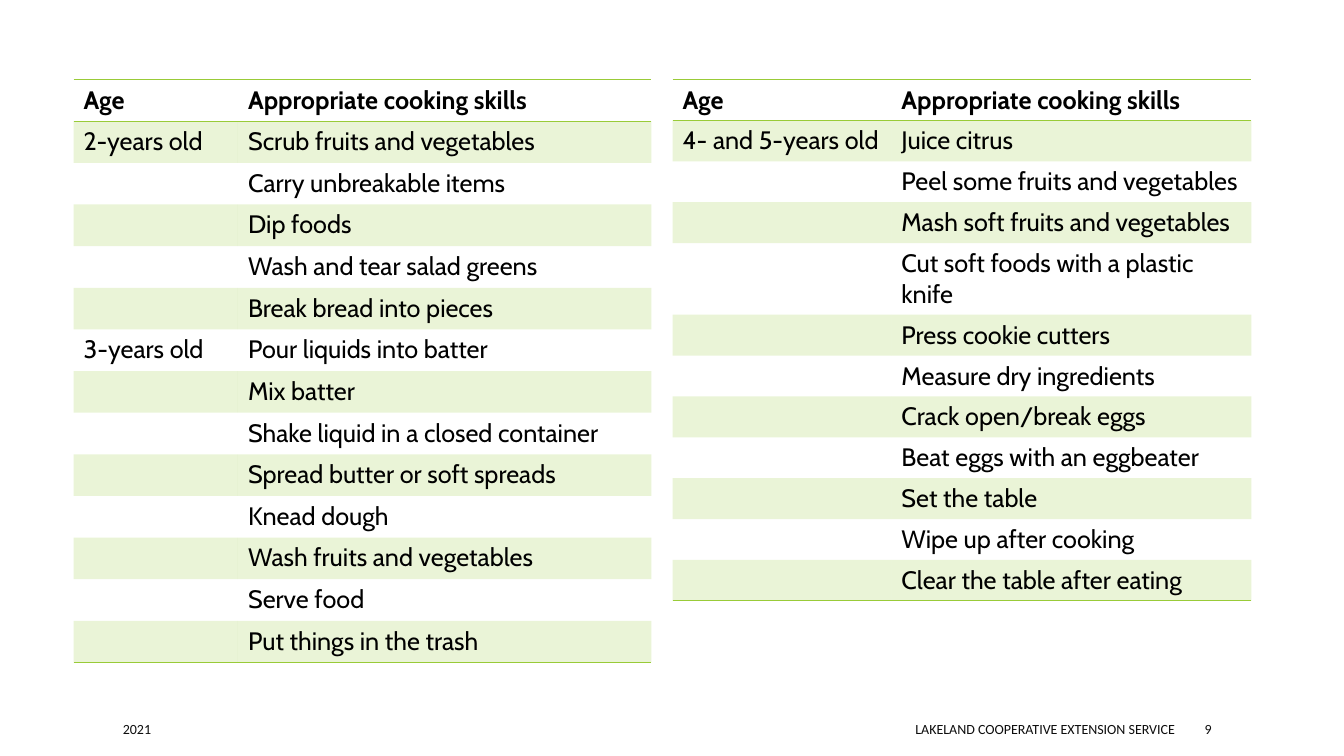
"""Build a slide with two tables of cooking skills by age."""
from dataclasses import dataclass

import lxml.etree
import pptx
import pptx.dml.color
import pptx.enum.text
import pptx.oxml.ns
import pptx.util

WIDE, HIGH = pptx.util.Inches(13.33), pptx.util.Inches(7.5)
GREEN, BLACK, GREY = "99CB38", "000000", "0D0D0D"
PLAIN = "{2D5ABB26-0587-4C30-8999-92F81FD0307C}"
HEAD = ("Age", "Appropriate cooking skills")
ALIGN = pptx.enum.text.PP_ALIGN


@dataclass
class Chart:
    """A table of skills, with lengths in percent of the slide."""
    left: float
    cols: tuple[float, float]
    row: float
    ages: dict[str, list[str]]


@dataclass
class Foot:
    """A footer text, with lengths in percent of the slide."""
    left: float
    width: float
    text: str
    align: ALIGN = ALIGN.LEFT


CHARTS = [
    Chart(5.48, (12.23, 30.76), 5.51, {
        "2-years old": [
            "Scrub fruits and vegetables", "Carry unbreakable items",
            "Dip foods", "Wash and tear salad greens",
            "Break bread into pieces"],
        "3-years old": [
            "Pour liquids into batter", "Mix batter",
            "Shake liquid in a closed container",
            "Spread butter or soft spreads", "Knead dough",
            "Wash fruits and vegetables", "Serve food",
            "Put things in the trash"]}),
    Chart(50.04, (16.28, 26.78), 5.41, {
        "4- and 5-years old": [
            "Juice citrus", "Peel some fruits and vegetables",
            "Mash soft fruits and vegetables",
            "Cut soft foods with a plastic knife", "Press cookie cutters",
            "Measure dry ingredients", "Crack open/break eggs",
            "Beat eggs with an eggbeater", "Set the table",
            "Wipe up after cooking", "Clear the table after eating"]}),
]
FEET = [
    Foot(8.4, 17.7, "2021"),
    Foot(39.76, 48.39, "LAKELAND COOPERATIVE EXTENSION SERVICE", ALIGN.RIGHT),
    Foot(88.9, 7.95, "9"),
]


def across(share: float) -> int:
    """Turn a percentage of the slide's width into a length."""
    return round(WIDE * share / 100)


def down(share: float) -> int:
    """Turn a percentage of the slide's height into a length."""
    return round(HIGH * share / 100)


def color(code: str) -> pptx.dml.color.RGBColor:
    """Turn a hex string into a colour."""
    return pptx.dml.color.RGBColor.from_string(code)


def write(frame, text: str, *, font: str, size: float, ink: str,
          bold: bool = False, align: ALIGN = ALIGN.LEFT) -> None:
    """Put formatted text in a text frame."""
    para = frame.paragraphs[0]
    para.alignment = align
    run = para.add_run()
    run.text = text
    run.font.name, run.font.size = font, pptx.util.Pt(size)
    run.font.bold = bold
    run.font.color.rgb = color(ink)


def child(node, tag: str, **attrs: str):
    """Add an XML element below a node."""
    return lxml.etree.SubElement(node, pptx.oxml.ns.qn(tag), attrs)


def rule(cell, side: str) -> None:
    """Draw a green border on one side of a cell."""
    line = child(cell._tc.get_or_add_tcPr(), side, w="12700")
    child(child(line, "a:solidFill"), "a:srgbClr", val=GREEN)


def shade(cell) -> None:
    """Fill a cell with pale green."""
    cell.fill.solid()
    cell.fill.fore_color.rgb = color(GREEN)
    tone = cell._tc.tcPr.find("./" + pptx.oxml.ns.qn("a:solidFill"))
    child(tone[0], "a:alpha", val="20000")


def draw_chart(slide, chart: Chart) -> None:
    """Draw one table of skills."""
    rows = [HEAD] + [("" if i else age, skill)
                     for age, skills in chart.ages.items()
                     for i, skill in enumerate(skills)]
    table = slide.shapes.add_table(
        len(rows), 2, across(chart.left), down(10.53),
        across(sum(chart.cols)), down(chart.row * len(rows))).table
    table._tbl.tblPr.find(pptx.oxml.ns.qn("a:tableStyleId")).text = PLAIN
    for col, width in zip(table.columns, chart.cols):
        col.width = across(width)
    for r, texts in enumerate(rows):
        table.rows[r].height = down(chart.row)
        for c, text in enumerate(texts):
            cell = table.cell(r, c)
            if text:
                write(cell.text_frame, text, font="Cabin", size=18,
                      ink=BLACK, bold=r == 0)
            if r == 0:
                rule(cell, "a:lnT")
            if r in (0, len(rows) - 1):
                rule(cell, "a:lnB")
            if r % 2:
                shade(cell)
            else:
                cell.fill.background()


def draw_foot(slide, foot: Foot) -> None:
    """Draw one footer text."""
    box = slide.shapes.add_textbox(across(foot.left), down(94.4),
                                   across(foot.width), down(4))
    frame = box.text_frame
    frame.word_wrap = True
    frame.vertical_anchor = pptx.enum.text.MSO_ANCHOR.MIDDLE
    write(frame, foot.text, font="Calibri", size=10, ink=GREY,
          align=foot.align)


def main() -> None:
    """Build and save the slide."""
    deck = pptx.Presentation()
    deck.slide_width, deck.slide_height = WIDE, HIGH
    slide = deck.slides.add_slide(deck.slide_layouts[6])
    for chart in CHARTS:
        draw_chart(slide, chart)
    for foot in FEET:
        draw_foot(slide, foot)
    deck.save("out.pptx")


if __name__ == "__main__":
    main()
